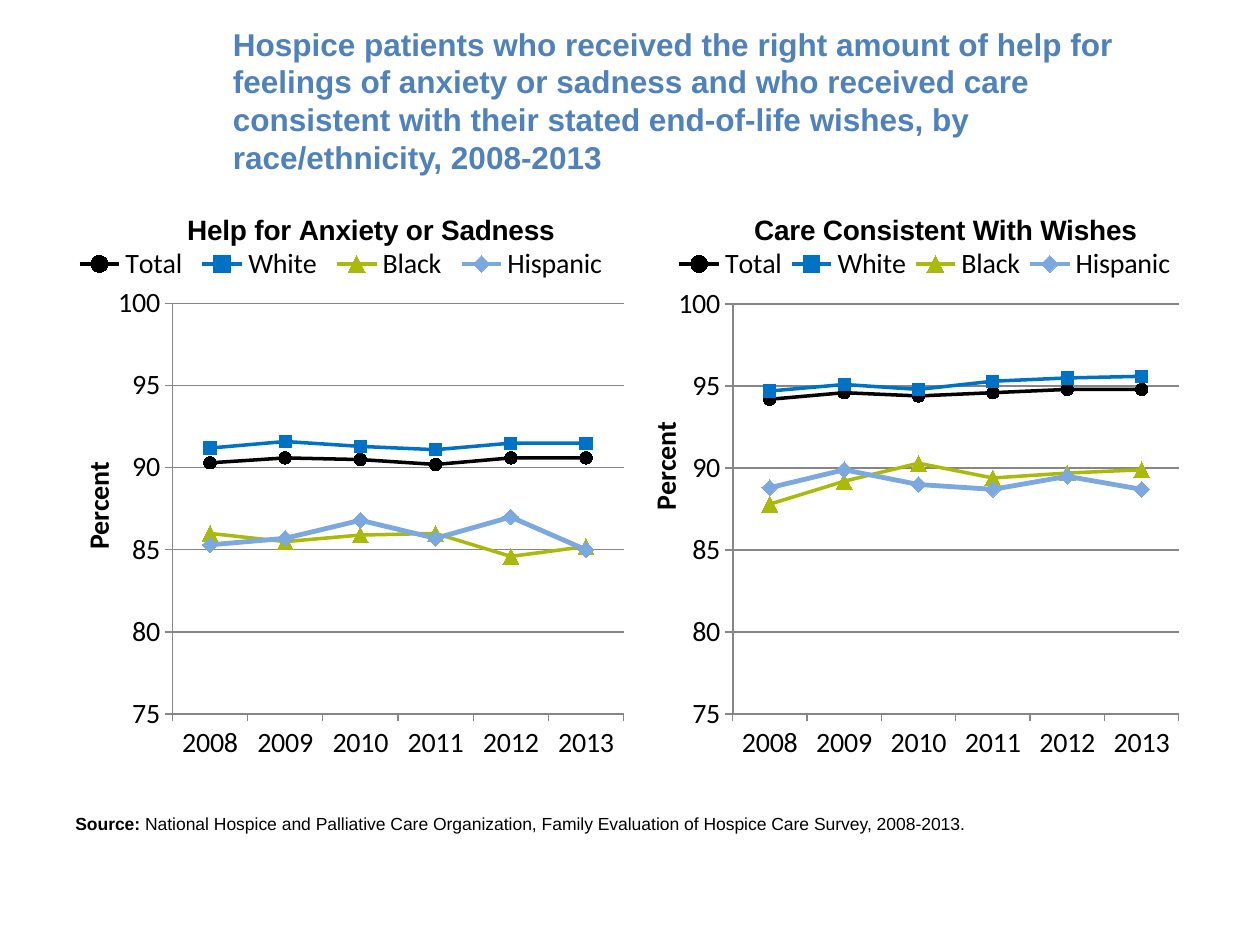
"""Build a slide with two line charts on hospice care by race/ethnicity."""
from dataclasses import dataclass

from pptx import Presentation
from pptx.chart.data import CategoryChartData
from pptx.dml.color import RGBColor
from pptx.enum.chart import XL_CHART_TYPE, XL_LEGEND_POSITION, XL_MARKER_STYLE, XL_TICK_MARK
from pptx.enum.text import MSO_ANCHOR
from pptx.oxml import parse_xml
from pptx.oxml.ns import nsdecls, qn
from pptx.util import Pt


@dataclass(frozen=True)
class Theme:
    heading: str = "4F81BD"
    ink: str = "000000"
    grid: str = "868686"
    white: str = "0072C6"
    black: str = "AABA0A"
    hispanic: str = "7BA8DF"
    text_font: str = "Arial"
    label_font: str = "Calibri"
    heading_size: int = 18
    chart_size: int = 16
    source_size: int = 10


THEME = Theme()
YEARS = [str(year) for year in range(2008, 2014)]
GROUPS = {
    "Total": (THEME.ink, XL_MARKER_STYLE.CIRCLE, 7, 2),
    "White": (THEME.white, XL_MARKER_STYLE.SQUARE, 7, 2),
    "Black": (THEME.black, XL_MARKER_STYLE.TRIANGLE, 9, 2),
    "Hispanic": (THEME.hispanic, XL_MARKER_STYLE.DIAMOND, 9, 2.75),
}
ANXIETY = {
    "Total": (90.3, 90.6, 90.5, 90.2, 90.6, 90.6),
    "White": (91.2, 91.6, 91.3, 91.1, 91.5, 91.5),
    "Black": (86, 85.5, 85.9, 86, 84.6, 85.2),
    "Hispanic": (85.3, 85.7, 86.8, 85.7, 87, 85),
}
WISHES = {
    "Total": (94.2, 94.6, 94.4, 94.6, 94.8, 94.8),
    "White": (94.7, 95.1, 94.8, 95.3, 95.5, 95.6),
    "Black": (87.8, 89.2, 90.3, 89.4, 89.7, 89.9),
    "Hispanic": (88.8, 89.9, 89, 88.7, 89.5, 88.7),
}


class SlideBuilder:
    def __init__(self, slide, theme):
        self.slide = slide
        self.theme = theme

    def style(self, font, name, size, color=None, bold=False):
        font.name, font.size, font.bold = name, Pt(size), bold
        font.color.rgb = RGBColor.from_string(color or self.theme.ink)

    def text(self, box, runs, size, color, anchor=MSO_ANCHOR.TOP):
        frame = self.slide.shapes.add_textbox(*map(Pt, box)).text_frame
        frame.word_wrap = True
        frame.vertical_anchor = anchor
        paragraph = frame.paragraphs[0]
        self.style(paragraph.font, self.theme.text_font, size, color)
        for wording, bold in runs:
            run = paragraph.add_run()
            run.text = wording
            run.font.bold = bold

    def place(self, element, index, x, y, size=None, inner=False):
        for previous in element.findall(qn("c:layout")):
            element.remove(previous)
        parts = [("layoutTarget", "inner")] if inner else []
        parts += [("xMode", "edge"), ("yMode", "edge"), ("x", x), ("y", y)]
        parts += zip("wh", size) if size else []
        body = "".join(f'<c:{tag} val="{value}"/>' for tag, value in parts)
        element.insert(index, parse_xml(
            f'<c:layout {nsdecls("c")}><c:manualLayout>{body}</c:manualLayout></c:layout>'))

    def title(self, title, wording, font_name, position):
        paragraph = title.text_frame.paragraphs[0]
        paragraph.text = wording
        self.style(paragraph.font, font_name, self.theme.chart_size, bold=True)
        self.place(title._element, 1, *position)

    def axis(self, axis, grid_width):
        axis.major_tick_mark = XL_TICK_MARK.OUTSIDE
        axis.minor_tick_mark = XL_TICK_MARK.NONE
        self.style(axis.tick_labels.font, self.theme.label_font, self.theme.chart_size)
        axis.format.line.color.rgb = RGBColor.from_string(self.theme.grid)
        axis.format.line.width = Pt(grid_width)

    def value_axis(self, axis, grid_width, title_position):
        self.axis(axis, grid_width)
        axis.minimum_scale, axis.maximum_scale, axis.major_unit = 75, 100, 5
        axis.tick_labels.number_format = "0"
        axis.tick_labels.number_format_is_linked = False
        axis.has_major_gridlines = True
        gridline = axis.major_gridlines.format.line
        gridline.color.rgb = RGBColor.from_string(self.theme.grid)
        gridline.width = Pt(grid_width)
        self.title(axis.axis_title, "Percent", self.theme.label_font, title_position)
        body = axis.axis_title._element.find(".//" + qn("a:bodyPr"))
        body.set("rot", "-5400000")
        body.set("vert", "horz")

    def series(self, series):
        color, marker, marker_size, width = GROUPS[series.name]
        rgb = RGBColor.from_string(color)
        series.smooth = False
        series.format.line.color.rgb = rgb
        series.format.line.width = Pt(width)
        series.marker.style, series.marker.size = marker, marker_size
        series.marker.format.fill.solid()
        series.marker.format.fill.fore_color.rgb = rgb
        series.marker.format.line.color.rgb = rgb

    def line_chart(self, box, heading, rates, grid_width, heading_at, legend, percent_at, plot):
        data = CategoryChartData(number_format="General")
        data.categories = YEARS
        for group, values in rates.items():
            data.add_series(group, values)
        chart = self.slide.shapes.add_chart(
            XL_CHART_TYPE.LINE_MARKERS, *map(Pt, box), data).chart
        self.style(chart.font, self.theme.text_font, self.theme.source_size)
        chart.has_title = True
        self.title(chart.chart_title, heading, self.theme.text_font, heading_at)
        chart.chart_title.include_in_layout = False
        chart.has_legend = True
        chart.legend.position = XL_LEGEND_POSITION.TOP
        chart.legend.include_in_layout = False
        self.style(chart.legend.font, self.theme.label_font, self.theme.chart_size)
        self.place(chart.legend._element, 1, *legend[:2], legend[2:])
        self.axis(chart.category_axis, 0.75)
        self.value_axis(chart.value_axis, grid_width, percent_at)
        chart.plots[0].vary_by_categories = False
        for series in chart.plots[0].series:
            self.series(series)
        plot_area = chart._chartSpace.find(".//" + qn("c:plotArea"))
        self.place(plot_area, 0, *plot[:2], plot[2:], inner=True)


def main():
    presentation = Presentation()
    presentation.slide_width, presentation.slide_height = Pt(720), Pt(540)
    slide = presentation.slides.add_slide(presentation.slide_layouts[6])
    builder = SlideBuilder(slide, THEME)
    builder.text((126, 12.24, 558, 90), [(
        "Hospice patients who received the right amount of help for feelings of anxiety "
        "or sadness and who received care consistent with their stated end-of-life wishes, "
        "by race/ethnicity, 2008-2013", True)],
        THEME.heading_size, THEME.heading, MSO_ANCHOR.MIDDLE)
    builder.line_chart(
        (36, 115.2, 324, 324), "Help for Anxiety or Sadness", ANXIETY, 0.75,
        heading_at=(0.21, 0.01), legend=(0.01, 0.07, 0.96, 0.08),
        percent_at=(0.02, 0.45), plot=(0.193, 0.18, 0.796, 0.724))
    builder.line_chart(
        (360, 115.2, 324, 324), "Care Consistent With Wishes", WISHES, 1.25,
        heading_at=(0.21, 0.01), legend=(0.07, 0.07, 0.9, 0.08),
        percent_at=(0.02, 0.38), plot=(0.181, 0.181, 0.787, 0.723))
    builder.text((36, 460.8, 648, 19.44), [
        ("Source: ", True),
        ("National Hospice and Palliative Care Organization, Family Evaluation of "
         "Hospice Care Survey, 2008-2013.", False)],
        THEME.source_size, THEME.ink)
    presentation.save("out.pptx")


if __name__ == "__main__":
    main()
